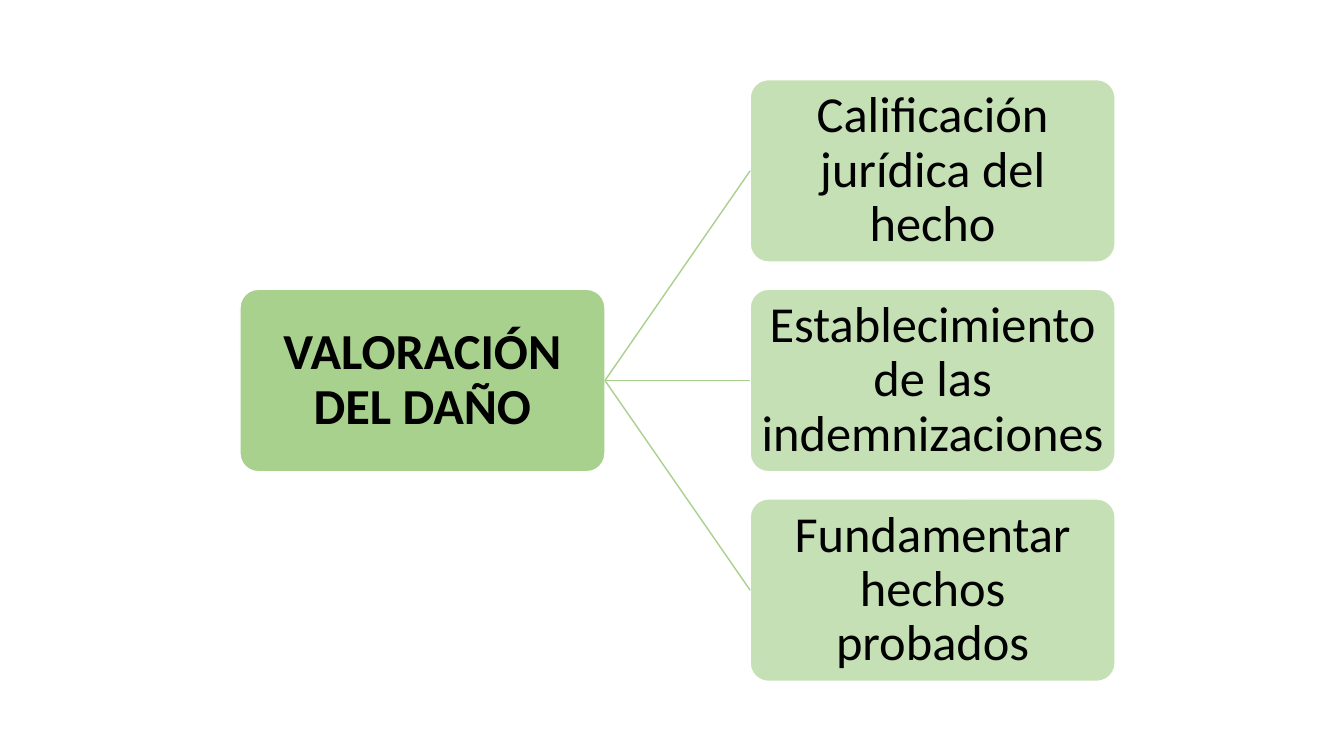
from dataclasses import dataclass
from lxml.etree import SubElement
from pptx import Presentation
from pptx.dml.color import RGBColor
from pptx.enum.shapes import MSO_CONNECTOR, MSO_SHAPE
from pptx.enum.text import MSO_ANCHOR, PP_ALIGN
from pptx.oxml.ns import qn
from pptx.util import Inches, Pt


@dataclass(frozen=True)
class Theme:
    root: RGBColor = RGBColor(0xA9, 0xD1, 0x8E)
    leaf: RGBColor = RGBColor(0xC5, 0xE0, 0xB4)
    edge: RGBColor = RGBColor(0xFF, 0xFF, 0xFF)
    ink: RGBColor = RGBColor(0, 0, 0)
    font: str = "Calibri"
    size: Pt = Pt(36)
    line: Pt = Pt(1)


class Board:
    def __init__(self, slide, theme):
        self.slide = slide
        self.theme = theme

    def box(self, text, left, top, fill, bold=False):
        theme = self.theme
        shape = self.slide.shapes.add_shape(
            MSO_SHAPE.ROUNDED_RECTANGLE,
            Inches(left), Inches(top), Inches(3.62), Inches(1.81))
        shape.adjustments[0] = 0.1
        shape.shadow.inherit = False
        shape.fill.solid()
        shape.fill.fore_color.rgb = fill
        shape.line.color.rgb = theme.edge
        shape.line.width = theme.line
        frame = shape.text_frame
        frame.word_wrap = True
        frame.vertical_anchor = MSO_ANCHOR.MIDDLE
        frame.margin_left = frame.margin_right = Inches(0.03)
        frame.margin_top = frame.margin_bottom = Inches(0.03)
        para = frame.paragraphs[0]
        para.text = text
        para.alignment = PP_ALIGN.CENTER
        para.line_spacing = 0.9
        para.font.name = theme.font
        para.font.size = theme.size
        para.font.bold = bold
        para.font.color.rgb = theme.ink
        return shape

    def link(self, start, end):
        line = self.slide.shapes.add_connector(MSO_CONNECTOR.STRAIGHT, 0, 0, 0, 0)
        line.begin_connect(start, 3)
        line.end_connect(end, 1)
        line.line.color.rgb = self.theme.root
        line.line.width = self.theme.line
        SubElement(line._element.spPr, qn("a:effectLst"))


def main():
    deck = Presentation()
    deck.slide_width = Inches(13.33)
    deck.slide_height = Inches(7.5)
    theme = Theme()
    board = Board(deck.slides.add_slide(deck.slide_layouts[6]), theme)
    top, step = 0.79, 2.08
    root = board.box("VALORACIÓN DEL DAÑO", 2.38, top + step, theme.root, True)
    leaves = (
        "Calificación jurídica del hecho",
        "Establecimiento de las indemnizaciones",
        "Fundamentar hechos probados",
    )
    for row, text in enumerate(leaves):
        leaf = board.box(text, 7.44, top + row * step, theme.leaf)
        board.link(root, leaf)
    deck.save("out.pptx")


if __name__ == "__main__":
    main()
